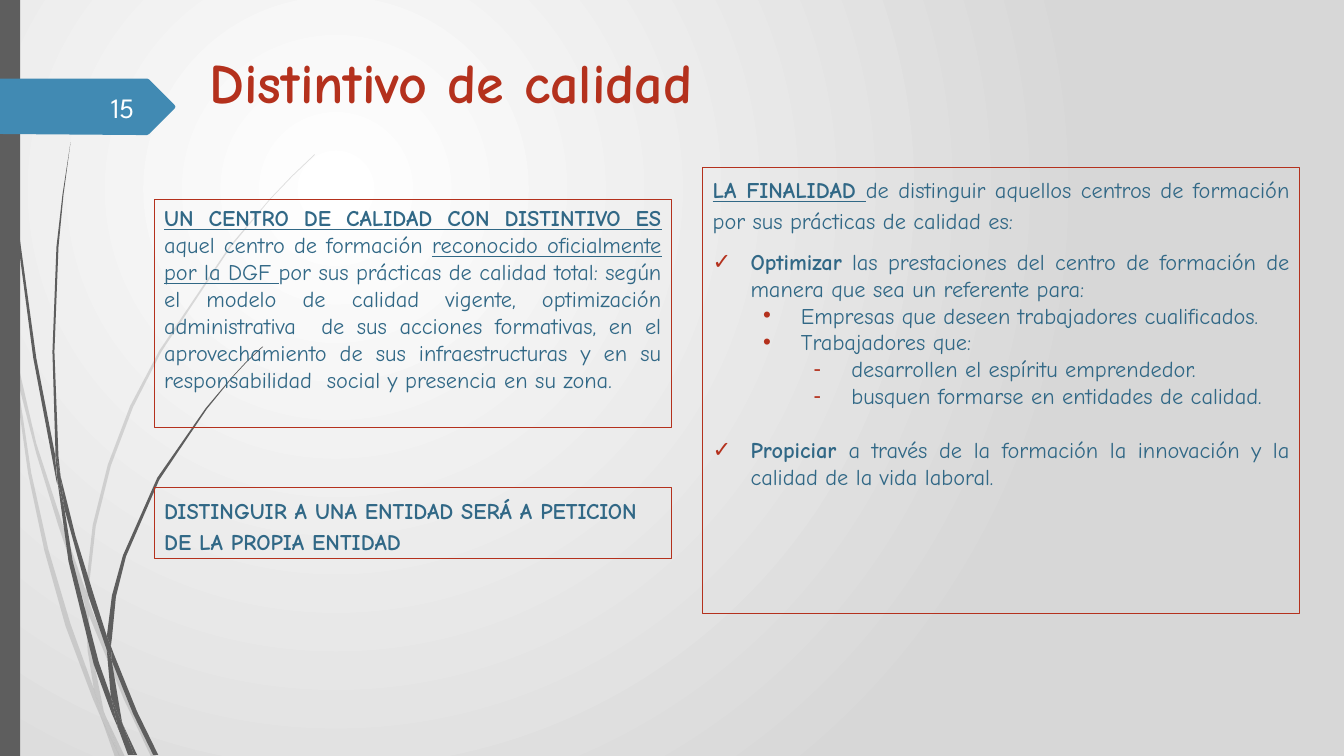
from dataclasses import dataclass
from typing import Optional

from lxml.etree import SubElement
from pptx import Presentation
from pptx.dml.color import RGBColor
from pptx.enum.shapes import MSO_SHAPE
from pptx.enum.text import MSO_ANCHOR, PP_ALIGN
from pptx.oxml.ns import qn
from pptx.util import Inches, Pt

COLORS = {"white": "FFFFFF", "backdrop": "D7D7D7", "gray": "5E5E5E", "tag": "418AB3",
          "red": "B4311D", "text": "316886", "number": "FEFFFF"}
BODY_FONT = "Comic Neue"
NUMBER_FONT = "League Spartan"
HANGING = 27
LEVEL_STEP = 36


@dataclass
class Outline:
    points: list[tuple[float, float]]
    color: str = "gray"
    alpha: int = 100


@dataclass
class Segment:
    text: str
    bold: bool = False
    underline: bool = False
    size: float = 16
    font: str = BODY_FONT
    color: str = "text"


@dataclass
class Line:
    segments: list[Segment]
    align: PP_ALIGN = PP_ALIGN.JUSTIFY
    level: int = 0
    bullet: Optional[str] = None
    spacing: float = 1.0
    before: float = 0
    after: float = 0


@dataclass
class Box:
    left: float
    top: float
    width: float
    height: float
    lines: list[Line]
    framed: bool = True
    anchor: MSO_ANCHOR = MSO_ANCHOR.TOP


PALE_GRASS = [
    [(0.11, 3.5), (0.09, 3.22), (0, 2.82), (0, 2.99), (0.1, 3.44)],
    [(0.58, 5.22), (0.84, 5.99), (0.85, 5.86), (0.62, 5.2), (0.36, 4.4), (0.14, 3.45),
     (0.17, 3.76), (0.36, 4.5)],
    [(0.92, 6.07), (0.88, 5.96), (0.88, 6.1), (1.23, 6.94), (1.5, 7.51), (1.55, 7.51), (1.27, 6.92)],
    [(1.19, 7.51), (1.24, 7.51), (1.05, 7.11)],
    [(0.93, 6.83), (0.7, 6.19), (0.48, 5.45), (0.31, 4.69), (0.17, 3.76), (0.11, 3.5), (0.28, 4.7),
     (0.44, 5.46), (0.65, 6.21), (0.92, 6.93), (1.01, 7.14), (0.99, 7.07)],
    [(0.84, 5.99), (0.87, 6.46), (0.93, 6.83), (0.96, 6.92), (1.05, 7.11), (1.03, 7.06),
     (0.91, 6.46), (0.88, 6.1), (0.88, 6.08)],
    [(0.88, 5.84), (0.95, 5.22), (1.1, 4.62), (1.32, 4.04), (1.6, 3.49), (2.29, 2.45), (2.68, 1.98),
     (2.9, 1.75), (3.12, 1.54), (3.12, 1.53), (2.89, 1.75), (2.68, 1.97), (2.28, 2.44),
     (1.58, 3.48), (1.29, 4.03), (1.07, 4.61), (0.92, 5.21), (0.85, 5.84), (0.85, 5.86), (0.88, 5.96)],
    [(1.01, 7.14), (1.14, 7.51), (1.19, 7.51)],
    [(0.88, 6.08), (0.88, 6.1), (0.88, 5.96), (0.85, 5.86), (0.84, 5.99)],
    [(0.96, 6.92), (0.93, 6.83), (0.99, 7.07), (1.01, 7.14), (1.19, 7.51), (1.05, 7.11)],
]
DARK_GRASS = [
    [(0.07, 1.1), (0.17, 2.33), (0.33, 3.55), (0.56, 4.77), (0.57, 4.81), (0.55, 4.57),
     (0.55, 4.53), (0.36, 3.55), (0.19, 2.32), (0.08, 1.09), (0.05, 0.48), (0.04, 0), (0.03, 0),
     (0.04, 0.48)],
    [(0.88, 5.92), (1.06, 6.45), (1.06, 6.33), (1.06, 6.31), (0.93, 5.9), (0.75, 5.32),
     (0.6, 4.72), (0.64, 5.05)],
    [(1.13, 6.49), (1.1, 6.41), (1.11, 6.56), (1.32, 7.08), (1.52, 7.49), (1.57, 7.49), (1.36, 7.06)],
    [(1.1, 6.91), (0.98, 6.57), (0.72, 5.56), (0.64, 5.05), (0.57, 4.77), (0.68, 5.57),
     (0.93, 6.59), (1.11, 7.08), (1.17, 7.22), (1.16, 7.17)],
    [(0.6, 4.72), (0.58, 4.53), (0.54, 3.49), (0.58, 2.45), (0.63, 1.93), (0.7, 1.41),
     (0.62, 1.93), (0.56, 2.45), (0.52, 3.49), (0.55, 4.49)],
    [(1.33, 7.49), (1.36, 7.49), (1.22, 7.19)],
    [(0.57, 4.77), (0.64, 5.05), (0.6, 4.72), (0.55, 4.49), (0.55, 4.53)],
    [(1.11, 6.33), (1.15, 5.92), (1.25, 5.52), (1.58, 4.76), (2.05, 4.06), (2.31, 3.74),
     (2.45, 3.59), (2.61, 3.44), (2.6, 3.44), (2.45, 3.58), (2.31, 3.73), (2.04, 4.05),
     (1.56, 4.74), (1.22, 5.51), (1.11, 5.91), (1.06, 6.31), (1.1, 6.41)],
    [(1.17, 7.22), (1.27, 7.49), (1.31, 7.49)],
    [(1.06, 6.45), (1.1, 6.91), (1.16, 7.06), (1.22, 7.19), (1.21, 7.16), (1.11, 6.56), (1.09, 6.51)],
    [(1.06, 6.45), (1.09, 6.51), (1.11, 6.56), (1.1, 6.41), (1.06, 6.31), (1.06, 6.33)],
    [(1.16, 7.06), (1.1, 6.91), (1.16, 7.17), (1.17, 7.22), (1.3, 7.49), (1.33, 7.49), (1.22, 7.19)],
]
GRASS = [Outline(points, alpha=20) for points in PALE_GRASS] + [Outline(points) for points in DARK_GRASS]
NUMBER_TAG = Outline([(1.73, 1.08), (1.48, 1.33), (1.46, 1.34), (1.36, 1.34), (0, 1.33), (0, 0.78),
                      (1.36, 0.78), (1.46, 0.78), (1.48, 0.79), (1.73, 1.04), (1.74, 1.06)], "tag")

BOXES = [
    Box(1.98, 0.42, 10.26, 0.81, [
        Line([Segment("Distintivo de calidad", bold=True, size=40, color="red")], PP_ALIGN.LEFT),
    ], framed=False),
    Box(6.97, 1.66, 5.92, 4.43, [
        Line([Segment("LA FINALIDAD ", True, True),
              Segment("de distinguir aquellos centros de formación por sus prácticas de calidad es:")],
             spacing=1.15, after=10),
        Line([Segment("Optimizar", True),
              Segment(" las prestaciones del centro de formación de manera que sea un referente para:")],
             bullet="✓"),
        Line([Segment("Empresas que deseen trabajadores cualificados.")], level=1, bullet="•"),
        Line([Segment("Trabajadores que:")], level=1, bullet="•"),
        Line([Segment("desarrollen el espíritu emprendedor.")], level=2, bullet="-"),
        Line([Segment("busquen formarse en entidades de calidad.")], level=2, bullet="-"),
        Line([Segment("Propiciar ", True),
              Segment("a través de la formación la innovación y la calidad de la vida laboral.")],
             bullet="✓", before=19.2),
    ]),
    Box(1.53, 1.98, 5.13, 2.26, [
        Line([Segment("UN CENTRO DE CALIDAD CON DISTINTIVO ES ", True, True),
              Segment("aquel centro de formación "),
              Segment("reconocido oficialmente por la DGF ", underline=True),
              Segment("por sus prácticas de calidad total: según el modelo de calidad vigente, "
                      "optimización administrativa  de sus acciones formativas, en el "
                      "aprovechamiento de sus infraestructuras y en su responsabilidad  social "
                      "y presencia en su zona.")]),
    ]),
    Box(0.58, 0.86, 0.85, 0.4, [
        Line([Segment("15", size=20, font=NUMBER_FONT, color="number")], PP_ALIGN.RIGHT),
    ], framed=False, anchor=MSO_ANCHOR.MIDDLE),
    Box(1.53, 4.84, 5.13, 0.7, [
        Line([Segment("DISTINGUIR A UNA ENTIDAD SERÁ A PETICION DE LA PROPIA ENTIDAD", True)],
             PP_ALIGN.LEFT, spacing=1.15, after=8),
    ]),
]


def rgb(name: str) -> RGBColor:
    return RGBColor.from_string(COLORS[name])


def paint_background(slide) -> None:
    fill = slide.background.fill
    fill.gradient()
    for stop, name in zip(fill.gradient_stops, ("white", "backdrop")):
        stop.color.rgb = rgb(name)
    gradient = slide.element.find(".//" + qn("a:gradFill"))
    gradient.remove(gradient.find(qn("a:lin")))
    circle = SubElement(gradient, qn("a:path"), {"path": "circle"})
    SubElement(circle, qn("a:fillToRect"), {"l": "50000", "t": "50000", "r": "100000", "b": "100000"})


def fill_plain(shape, color: str, alpha: int = 100) -> None:
    shape.shadow.inherit = False
    shape.fill.solid()
    shape.fill.fore_color.rgb = rgb(color)
    shape.line.fill.background()
    if alpha < 100:
        tint = shape.element.spPr.find(qn("a:solidFill"))[0]
        SubElement(tint, qn("a:alpha"), {"val": str(alpha * 1000)})


def draw_outline(slide, outline: Outline) -> None:
    corners = [(Inches(x), Inches(y)) for x, y in outline.points]
    builder = slide.shapes.build_freeform(*corners[0])
    builder.add_line_segments(corners[1:], close=True)
    fill_plain(builder.convert_to_shape(), outline.color, outline.alpha)


def add_bullet(paragraph, line: Line) -> None:
    properties = paragraph._p.get_or_add_pPr()
    properties.set("marL", str(Pt(HANGING + line.level * LEVEL_STEP)))
    properties.set("indent", str(-Pt(HANGING)))
    color = SubElement(properties, qn("a:buClr"))
    SubElement(color, qn("a:srgbClr"), {"val": COLORS["red"]})
    SubElement(properties, qn("a:buFont"), {"typeface": "Arial"})
    SubElement(properties, qn("a:buChar"), {"char": line.bullet})


def write_line(paragraph, line: Line) -> None:
    paragraph.alignment = line.align
    paragraph.level = line.level
    paragraph.line_spacing = line.spacing
    paragraph.space_before = Pt(line.before)
    paragraph.space_after = Pt(line.after)
    if line.bullet:
        add_bullet(paragraph, line)
    for segment in line.segments:
        run = paragraph.add_run()
        run.text = segment.text
        font = run.font
        font.name, font.size = segment.font, Pt(segment.size)
        font.bold, font.underline = segment.bold, segment.underline
        font.color.rgb = rgb(segment.color)


def draw_box(slide, box: Box) -> None:
    place = [Inches(value) for value in (box.left, box.top, box.width, box.height)]
    if box.framed:
        shape = slide.shapes.add_shape(MSO_SHAPE.RECTANGLE, *place)
        shape.shadow.inherit = False
        shape.fill.background()
        shape.line.color.rgb = rgb("red")
        shape.line.width = Pt(0.75)
    else:
        shape = slide.shapes.add_textbox(*place)
    frame = shape.text_frame
    frame.word_wrap = True
    frame.vertical_anchor = box.anchor
    for index, line in enumerate(box.lines):
        write_line(frame.add_paragraph() if index else frame.paragraphs[0], line)


def main() -> None:
    presentation = Presentation()
    presentation.slide_width, presentation.slide_height = Inches(13.33), Inches(7.5)
    slide = presentation.slides.add_slide(presentation.slide_layouts[6])
    paint_background(slide)
    for blade in GRASS:
        draw_outline(slide, blade)
    side_bar = slide.shapes.add_shape(MSO_SHAPE.RECTANGLE, 0, 0, Inches(0.2), Inches(7.5))
    fill_plain(side_bar, "gray")
    draw_outline(slide, NUMBER_TAG)
    for box in BOXES:
        draw_box(slide, box)
    presentation.save("out.pptx")


if __name__ == "__main__":
    main()
